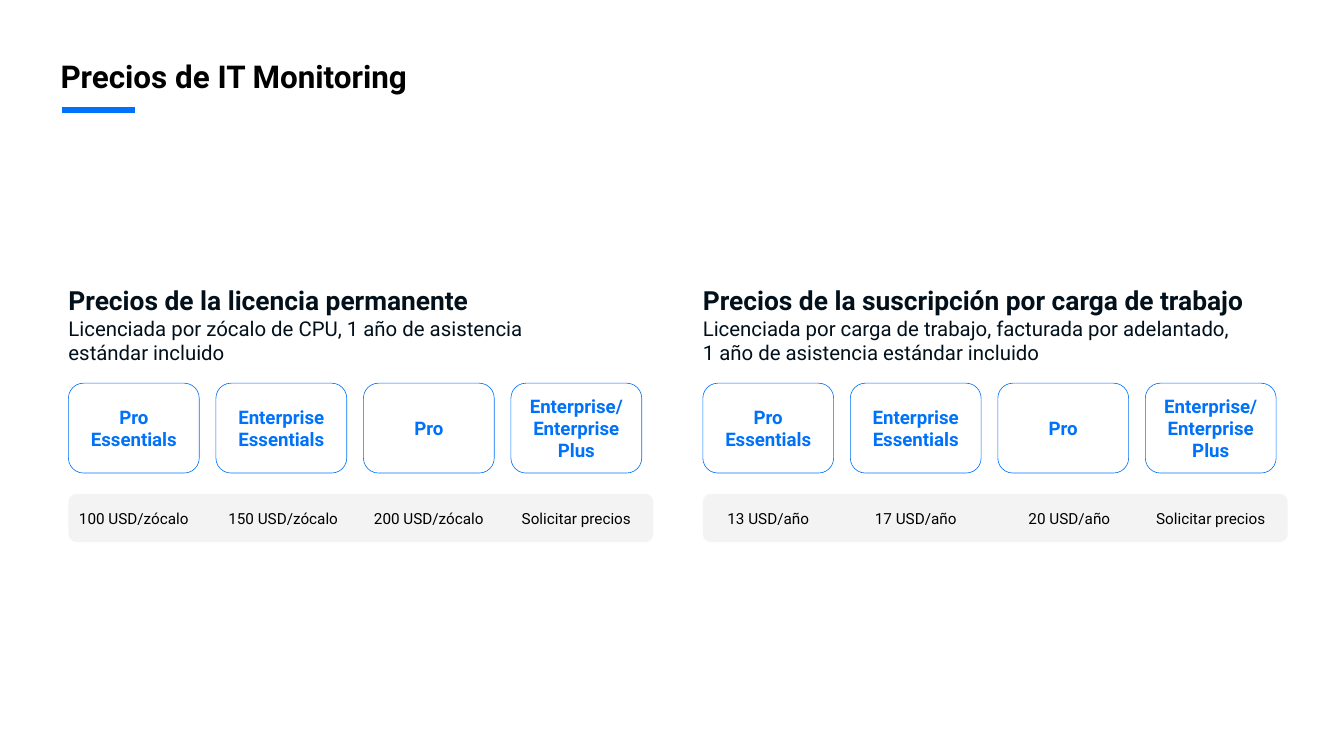
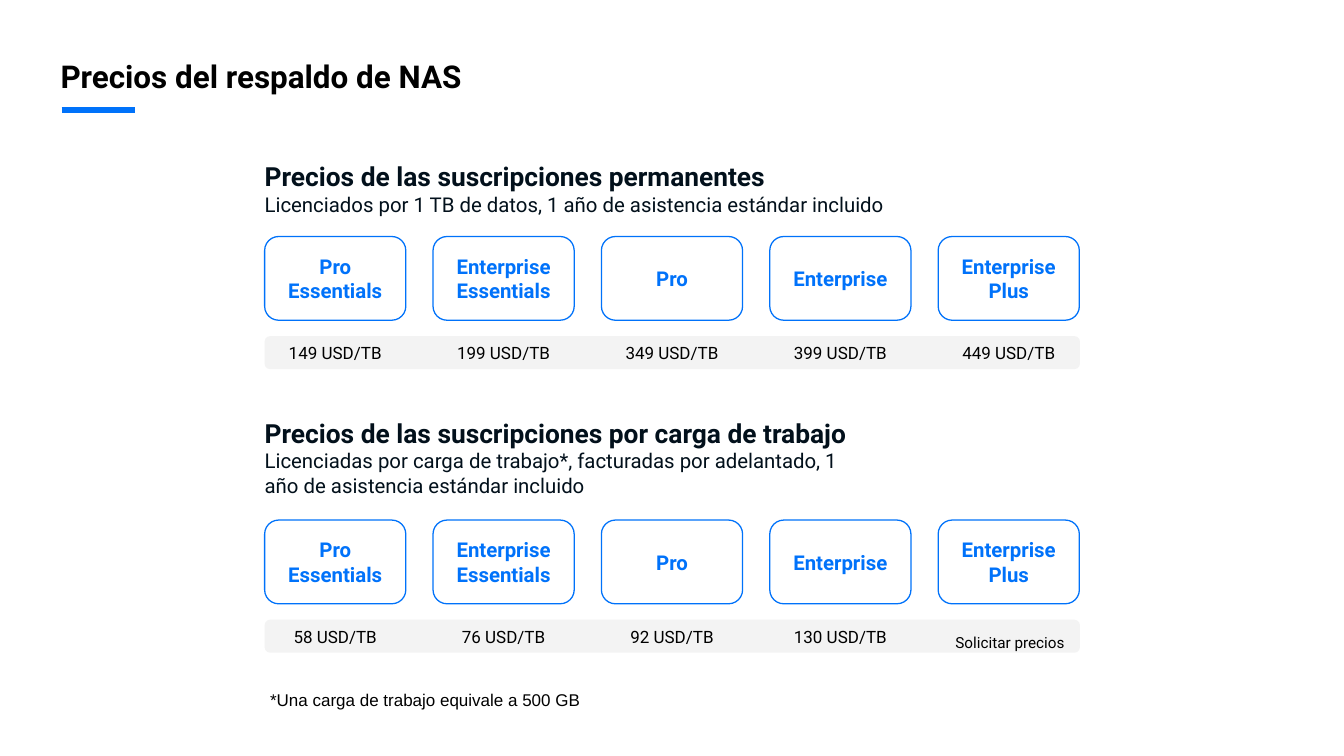
from dataclasses import dataclass

from lxml import etree
from pptx import Presentation
from pptx import util as u
from pptx.dml.color import RGBColor
from pptx.enum import shapes, text
from pptx.oxml import ns

EMU_PER_PX = 9144
SLIDE_WIDTH, SLIDE_HEIGHT = 2199, 1237
FONT = "Roboto"
COLORS = {
    "title": "000000",
    "heading": "02101B",
    "accent": "0072FA",
    "card": "FFFFFF",
    "bar": "F3F3F3",
}
HEADING_INSETS = (0, 22, 22, 22)
LABEL_INSETS = (10, 10, 10, 10)


@dataclass(frozen=True)
class Box:
    left: float
    top: float
    width: float
    height: float


@dataclass(frozen=True)
class Price:
    label: str
    shift_x: int = 0
    shift_y: int = 0
    size: int | None = None


@dataclass(frozen=True)
class PanelStyle:
    card_width: int
    card_height: int
    cards_span: int
    card_size: int
    line_width: float
    bar_top: int
    bar_width: int
    bar_height: int
    price_width: int
    price_height: int
    price_size: int


@dataclass(frozen=True)
class Panel:
    heading: str
    detail: str
    heading_box: Box
    cards_top: int
    plans: tuple[str, ...]
    prices: tuple[Price, ...]


MONITORING_STYLE = PanelStyle(214, 147, 938, 22, 0.75, 181, 957, 79, 210, 66, 18)
NAS_STYLE = PanelStyle(231, 137, 1333, 24, 1.5, 163, 1334, 54, 228, 45, 20)

MONITORING_PLANS = ("Pro Essentials", "Enterprise Essentials", "Pro",
                    "Enterprise/\nEnterprise Plus")
NAS_PLANS = ("Pro Essentials", "Enterprise Essentials", "Pro", "Enterprise",
             "Enterprise Plus")

MONITORING_PANELS = (
    Panel(
        "Precios de la licencia permanente",
        "Licenciada por zócalo de CPU, 1 año de asistencia \nestándar incluido",
        Box(112, 443, 1002, 177), 627, MONITORING_PLANS,
        (Price("100 USD/zócalo"), Price("150 USD/zócalo", shift_x=3),
         Price("200 USD/zócalo"), Price("Solicitar precios")),
    ),
    Panel(
        "Precios de la suscripción por carga de trabajo",
        "Licenciada por carga de trabajo, facturada por adelantado, \n"
        "1 año de asistencia estándar incluido",
        Box(1150, 443, 980, 177), 627, MONITORING_PLANS,
        (Price("13 USD/año"), Price("17 USD/año"),
         Price("20 USD/año", shift_x=10), Price("Solicitar precios")),
    ),
)
NAS_PANELS = (
    Panel(
        "Precios de las suscripciones permanentes",
        "Licenciados por 1 TB de datos, 1 año de asistencia estándar incluido",
        Box(433, 240, 1151, 137), 387, NAS_PLANS,
        (Price("149 USD/TB"), Price("199 USD/TB"), Price("349 USD/TB"),
         Price("399 USD/TB"), Price("449 USD/TB")),
    ),
    Panel(
        "Precios de las suscripciones por carga de trabajo",
        "Licenciadas por carga de trabajo*, facturadas por adelantado, "
        "1 año de asistencia estándar incluido",
        Box(433, 660, 1002, 177), 851, NAS_PLANS,
        (Price("58 USD/TB"), Price("76 USD/TB"), Price("92 USD/TB"),
         Price("130 USD/TB"),
         Price("Solicitar precios", shift_x=2, shift_y=10, size=18)),
    ),
)


def px(length: float) -> u.Emu:
    return u.Emu(round(length * EMU_PER_PX))


def place(box: Box) -> tuple[u.Emu, ...]:
    return px(box.left), px(box.top), px(box.width), px(box.height)


def rgb(name: str) -> RGBColor:
    return RGBColor.from_string(COLORS[name])


def write(shape, content: str, *, size: int, color: str = "title", bold: bool = False,
          font: str = FONT, centered: bool = False, insets=(0, 0, 0, 0),
          append: bool = False) -> None:
    frame = shape.text_frame
    frame.word_wrap = True
    (frame.margin_left, frame.margin_top,
     frame.margin_right, frame.margin_bottom) = map(px, insets)
    frame.vertical_anchor = text.MSO_ANCHOR.MIDDLE if centered else text.MSO_ANCHOR.TOP
    paragraph = frame.add_paragraph() if append else frame.paragraphs[0]
    paragraph.text = content.replace("\n", "\v")
    paragraph.alignment = text.PP_ALIGN.CENTER if centered else text.PP_ALIGN.LEFT
    for run in paragraph.runs:
        run.font.name = font
        run.font.size = u.Pt(size)
        run.font.bold = bold
        run.font.color.rgb = rgb(color)


def add_text(slide, box: Box, content: str, **style):
    shape = slide.shapes.add_textbox(*place(box))
    write(shape, content, **style)
    return shape


def add_rounded(slide, box: Box, fill: str, line_width: float = 0):
    shape = slide.shapes.add_shape(shapes.MSO_SHAPE.ROUNDED_RECTANGLE, *place(box))
    shape.shadow.inherit = False
    shape.fill.solid()
    shape.fill.fore_color.rgb = rgb(fill)
    if line_width:
        shape.line.color.rgb = rgb("accent")
        shape.line.width = u.Pt(line_width)
    else:
        shape.line.fill.background()
    return shape


def add_panel(slide, panel: Panel, style: PanelStyle) -> None:
    left = panel.heading_box.left
    heading = add_text(slide, panel.heading_box, panel.heading, size=31,
                       color="heading", bold=True, insets=HEADING_INSETS)
    write(heading, panel.detail, size=24, color="heading",
          insets=HEADING_INSETS, append=True)

    bar_top = panel.cards_top + style.bar_top
    add_rounded(slide, Box(left, bar_top, style.bar_width, style.bar_height), "bar")

    pitch = (style.cards_span - style.card_width) / (len(panel.plans) - 1)
    price_left = left + (style.card_width - style.price_width) / 2
    price_top = bar_top + (style.bar_height - style.price_height) / 2
    for index, (plan, price) in enumerate(zip(panel.plans, panel.prices)):
        offset = index * pitch
        card_box = Box(left + offset, panel.cards_top, style.card_width, style.card_height)
        card = add_rounded(slide, card_box, "card", style.line_width)
        write(card, plan, size=style.card_size, color="accent", bold=True,
              centered=True, insets=LABEL_INSETS)
        price_box = Box(price_left + offset + price.shift_x, price_top + price.shift_y,
                        style.price_width, style.price_height)
        add_text(slide, price_box, price.label, size=price.size or style.price_size,
                 centered=True, insets=LABEL_INSETS)


def add_price_slide(presentation, title: str, panels: tuple[Panel, ...], style: PanelStyle):
    slide = presentation.slides.add_slide(presentation.slide_layouts[6])
    add_text(slide, Box(99, 94, 1471, 55), title, size=37, bold=True)
    underline = slide.shapes.add_connector(
        shapes.MSO_CONNECTOR.STRAIGHT, px(101), px(180), px(221), px(180))
    underline.line.color.rgb = rgb("accent")
    underline.line.width = u.Pt(6)
    etree.SubElement(underline._element.spPr, ns.qn("a:effectLst"))
    for panel in panels:
        add_panel(slide, panel, style)
    return slide


def main() -> None:
    presentation = Presentation()
    presentation.slide_width = px(SLIDE_WIDTH)
    presentation.slide_height = px(SLIDE_HEIGHT)
    add_price_slide(presentation, "Precios de IT Monitoring",
                    MONITORING_PANELS, MONITORING_STYLE)
    nas_slide = add_price_slide(presentation, "Precios del respaldo de NAS",
                                NAS_PANELS, NAS_STYLE)
    add_text(nas_slide, Box(420, 1111, 794, 78), "*Una carga de trabajo equivale a 500 GB",
             size=20, font="Arial", insets=(22, 22, 22, 22))
    presentation.save("out.pptx")


if __name__ == "__main__":
    main()
